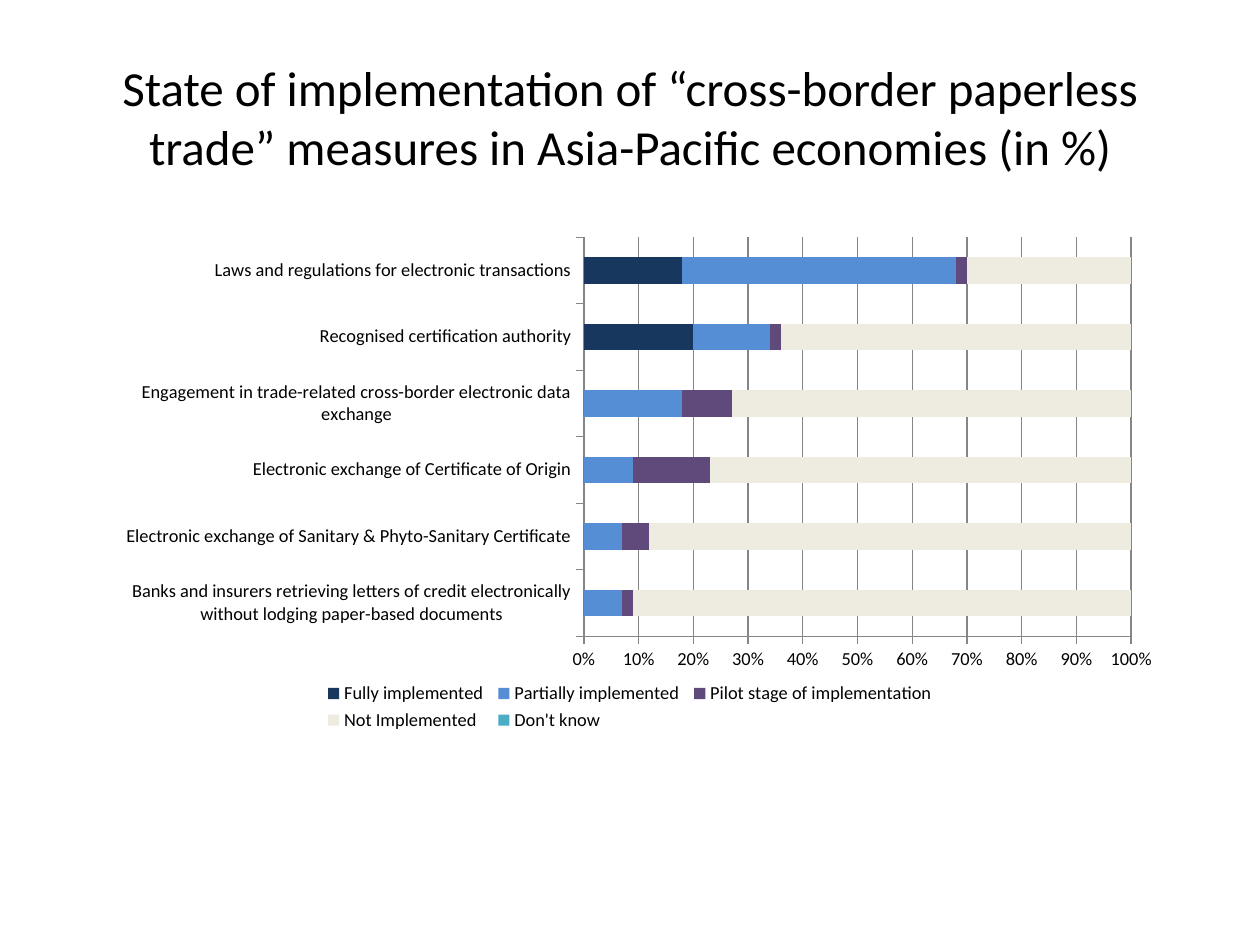
from lxml.etree import SubElement
from pptx import Presentation
from pptx.chart.data import CategoryChartData
from pptx.dml.color import RGBColor
from pptx.enum.chart import XL_CHART_TYPE as ChartType
from pptx.enum.chart import XL_LEGEND_POSITION as LegendPosition
from pptx.enum.chart import XL_TICK_MARK as TickMark
from pptx.enum.text import MSO_ANCHOR as Anchor
from pptx.enum.text import PP_ALIGN as Align
from pptx.oxml.ns import qn
from pptx.util import Pt

FONT = "Calibri"
BLACK = RGBColor(0x00, 0x00, 0x00)
GRAY = RGBColor(0x86, 0x86, 0x86)
NAVY = RGBColor(0x17, 0x37, 0x5E)
BLUE = RGBColor(0x55, 0x8E, 0xD5)
PURPLE = RGBColor(0x60, 0x4A, 0x7B)
CREAM = RGBColor(0xEE, 0xEC, 0xE1)
TEAL = RGBColor(0x4B, 0xAC, 0xC6)

TITLE = ("State of implementation of “cross-border paperless trade” "
         "measures in Asia-Pacific economies (in %)")
# Measures from the bottom bar to the top one
MEASURES = [
    "Banks and insurers retrieving letters of credit electronically "
    "without lodging paper-based documents",
    "Electronic exchange of Sanitary & Phyto-Sanitary Certificate",
    "Electronic exchange of Certificate of Origin",
    "Engagement in trade-related cross-border electronic data exchange",
    "Recognised certification authority",
    "Laws and regulations for electronic transactions",
]
STAGES = [
    ("Fully implemented", NAVY, (0, 0, 0, 0, 20, 18)),
    ("Partially implemented", BLUE, (7, 7, 9, 18, 14, 50)),
    ("Pilot stage of implementation", PURPLE, (2, 5, 14, 9, 2, 2)),
    ("Not Implemented", CREAM, (91, 89, 77, 73, 64, 30)),
    ("Don't know", TEAL, (0, 0, 0, 0, 0, 0)),
]


def style_font(font, size):
    font.name = FONT
    font.size = Pt(size)
    font.color.rgb = BLACK


def add_title(slide):
    frame = slide.shapes.add_textbox(Pt(36), Pt(21.6), Pt(648), Pt(90)).text_frame
    frame.word_wrap = True
    frame.vertical_anchor = Anchor.MIDDLE
    frame.text = TITLE
    heading = frame.paragraphs[0]
    heading.alignment = Align.CENTER
    style_font(heading.runs[0].font, 28)


def set_layout(parent, index, x, y, w, h, inner=False):
    """Place a chart part by fractions of the chart's size."""
    for old in parent.findall(qn("c:layout")):
        parent.remove(old)
    layout = SubElement(parent, qn("c:layout"))
    parent.insert(index, layout)
    manual = SubElement(layout, qn("c:manualLayout"))
    settings = [("layoutTarget", "inner")] if inner else []
    settings += [("xMode", "edge"), ("yMode", "edge"),
                 ("x", x), ("y", y), ("w", w), ("h", h)]
    for tag, value in settings:
        SubElement(manual, qn(f"c:{tag}")).set("val", str(value))


def style_axis(axis):
    axis.major_tick_mark = TickMark.OUTSIDE
    axis.minor_tick_mark = TickMark.NONE
    axis.format.line.color.rgb = GRAY
    axis.format.line.width = Pt(0.75)


def add_stage_chart(slide):
    data = CategoryChartData(number_format="0")
    data.categories = MEASURES
    for name, _, shares in STAGES:
        data.add_series(name, shares)
    chart = slide.shapes.add_chart(
        ChartType.BAR_STACKED_100, Pt(54), Pt(120.24), Pt(612), Pt(300.24), data).chart
    chart.has_title = False
    style_font(chart.font, 10.5)

    # Bars
    plot = chart.plots[0]
    plot.gap_width = 150
    plot.overlap = 100
    plot.vary_by_categories = False
    for series, (_, color, _) in zip(plot.series, STAGES):
        series.format.fill.solid()
        series.format.fill.fore_color.rgb = color

    # Axes
    style_axis(chart.category_axis)
    share_axis = chart.value_axis
    style_axis(share_axis)
    share_axis.major_unit = 0.1
    share_axis.has_major_gridlines = True
    share_axis.major_gridlines.format.line.color.rgb = GRAY
    share_axis.major_gridlines.format.line.width = Pt(0.75)
    share_axis.tick_labels.number_format = "0%"
    share_axis.tick_labels.number_format_is_linked = False

    # Legend and plot placement
    chart.has_legend = True
    chart.legend.position = LegendPosition.BOTTOM
    chart.legend.include_in_layout = False
    set_layout(chart.legend._element, 1, 0.21, 0.89, 0.58, 0.11)
    plot_area = chart._chartSpace.find(f".//{qn('c:plotArea')}")
    set_layout(plot_area, 0, 0.457, 0.051, 0.511, 0.76, inner=True)


def main():
    deck = Presentation()
    deck.slide_width, deck.slide_height = Pt(720), Pt(540)
    slide = deck.slides.add_slide(deck.slide_layouts[6])
    add_title(slide)
    add_stage_chart(slide)
    deck.save("out.pptx")


if __name__ == "__main__":
    main()
